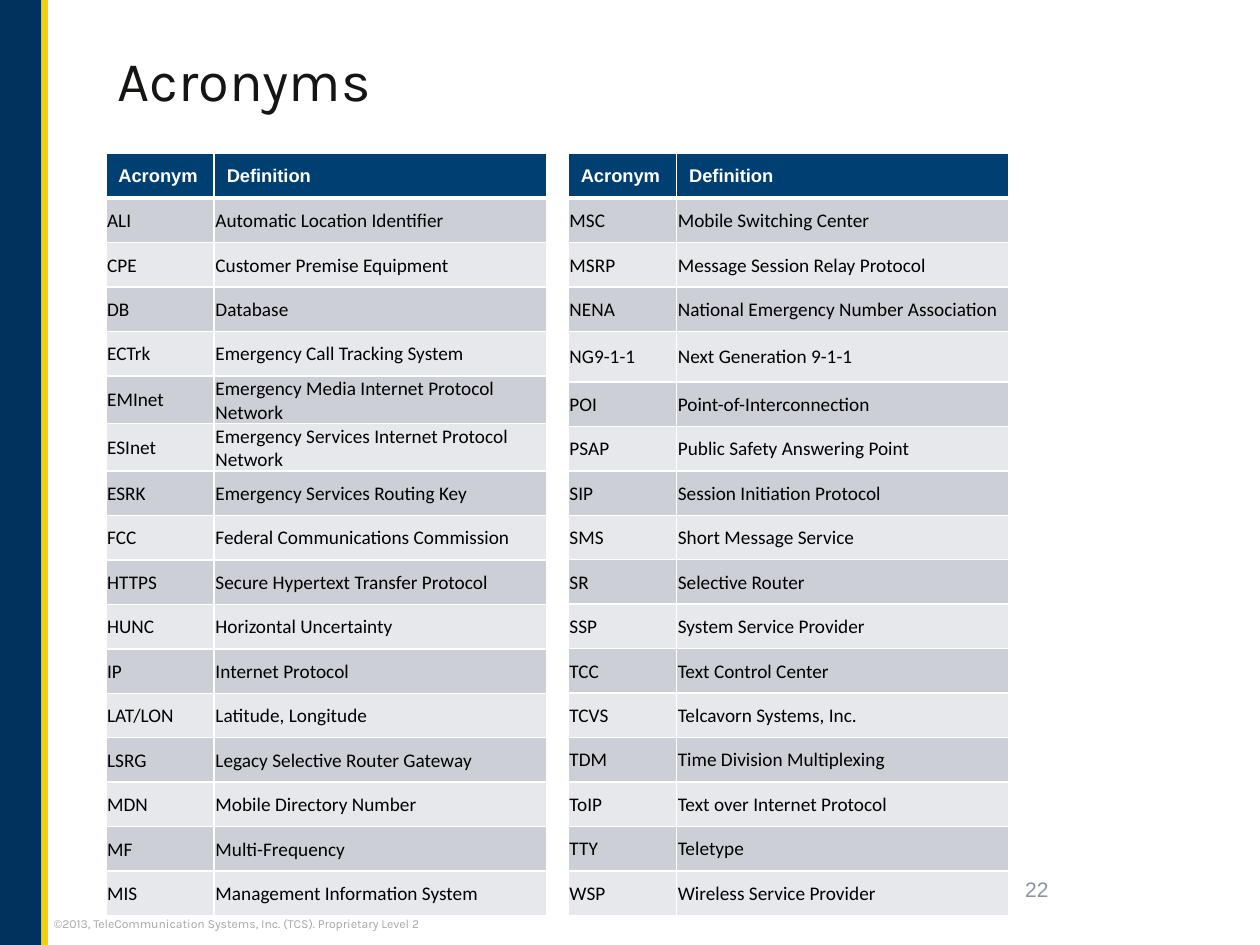
"""Build the Acronyms slide with two glossary tables."""
from dataclasses import dataclass

from lxml import etree
from pptx import Presentation
from pptx.dml.color import RGBColor
from pptx.enum.shapes import MSO_SHAPE
from pptx.enum.text import MSO_ANCHOR, PP_ALIGN
from pptx.oxml.ns import qn
from pptx.slide import Slide
from pptx.util import Inches, Pt

RECTANGLE = MSO_SHAPE.RECTANGLE
MIDDLE, TOP = MSO_ANCHOR.MIDDLE, MSO_ANCHOR.TOP
LEFT, RIGHT = PP_ALIGN.LEFT, PP_ALIGN.RIGHT
TITLE_ONLY = 5
ROW_HEIGHT = 6 / 17
COLUMN_WIDTHS = (0.86, 2.64)
TABLE_TOP = 1.22


@dataclass(frozen=True)
class TextStyle:
    """Font, size and colour of one kind of text."""
    font: str
    size: float
    color: str
    bold: bool = False


@dataclass(frozen=True)
class Theme:
    """Colours and text styles of the slide."""
    navy: str = "00325E"
    yellow: str = "F7CF09"
    header: str = "003F72"
    bands: tuple[str, str] = ("CCCFD5", "E7E8EB")
    border: str = "FFFFFF"
    title: TextStyle = TextStyle("Karla", 32, "151514")
    copyright: TextStyle = TextStyle("Karla", 7, "A6A6A6")
    number: TextStyle = TextStyle("Arial", 12, "8C93A5")
    heading: TextStyle = TextStyle("Arial", 10.5, "FFFFFF", True)
    entry: TextStyle = TextStyle("Calibri", 11, "000000")


@dataclass(frozen=True)
class Glossary:
    """One table of acronyms, with any rows of special height."""
    left: float
    entries: tuple[tuple[str, str], ...]
    tall_rows: tuple[tuple[int, float], ...] = ()


THEME = Theme()

FIRST_GLOSSARY = Glossary(0.84, (
    ("ALI", "Automatic Location Identifier"),
    ("CPE", "Customer Premise Equipment"),
    ("DB", "Database"),
    ("ECTrk", "Emergency Call Tracking System"),
    ("EMInet", "Emergency Media Internet Protocol Network"),
    ("ESInet", "Emergency Services Internet Protocol Network"),
    ("ESRK", "Emergency Services Routing Key"),
    ("FCC", "Federal Communications Commission"),
    ("HTTPS", "Secure Hypertext Transfer Protocol"),
    ("HUNC", "Horizontal Uncertainty"),
    ("IP", "Internet Protocol"),
    ("LAT/LON", "Latitude, Longitude"),
    ("LSRG", "Legacy Selective Router Gateway"),
    ("MDN", "Mobile Directory Number"),
    ("MF", "Multi-Frequency"),
    ("MIS", "Management Information System"),
))

SECOND_GLOSSARY = Glossary(4.51, (
    ("MSC", "Mobile Switching Center"),
    ("MSRP", "Message Session Relay Protocol"),
    ("NENA", "National Emergency Number Association"),
    ("NG9-1-1", "Next Generation 9-1-1"),
    ("POI", "Point-of-Interconnection"),
    ("PSAP", "Public Safety Answering Point"),
    ("SIP", "Session Initiation Protocol"),
    ("SMS", "Short Message Service"),
    ("SR", "Selective Router"),
    ("SSP", "System Service Provider"),
    ("TCC", "Text Control Center"),
    ("TCVS", "Telcavorn Systems, Inc."),
    ("TDM", "Time Division Multiplexing"),
    ("ToIP", "Text over Internet Protocol"),
    ("TTY", "Teletype"),
    ("WSP", "Wireless Service Provider"),
), ((4, 0.4),))


def write_text(frame, text: str, style: TextStyle, alignment=LEFT) -> None:
    """Put one styled paragraph in a text frame."""
    frame.text = text
    paragraph = frame.paragraphs[0]
    paragraph.alignment = alignment
    font = paragraph.font
    font.name, font.size, font.bold = style.font, Pt(style.size), style.bold
    font.color.rgb = RGBColor.from_string(style.color)


def add_bar(slide: Slide, left: float, width: float, color: str) -> None:
    """Draw a full-height bar."""
    bar = slide.shapes.add_shape(RECTANGLE, Inches(left), 0, Inches(width), Inches(7.5))
    bar.shadow.inherit = False
    bar.fill.solid()
    bar.fill.fore_color.rgb = RGBColor.from_string(color)
    bar.line.fill.background()


def add_label(slide: Slide, bounds: tuple[float, ...], text: str, style: TextStyle,
              alignment=LEFT, anchor=TOP) -> None:
    """Add a wrapping text box."""
    frame = slide.shapes.add_textbox(*map(Inches, bounds)).text_frame
    frame.word_wrap = True
    frame.vertical_anchor = anchor
    write_text(frame, text, style, alignment)


def format_cell(cell, text: str, style: TextStyle, color: str, bottom: float) -> None:
    """Write, border and fill one table cell."""
    write_text(cell.text_frame, text, style)
    cell.vertical_anchor = MIDDLE
    properties = cell._tc.get_or_add_tcPr()
    for side, width in (("L", 1), ("R", 1), ("T", 1), ("B", bottom)):
        line = etree.SubElement(properties, qn(f"a:ln{side}"), w=str(Pt(width)))
        fill = etree.SubElement(line, qn("a:solidFill"))
        etree.SubElement(fill, qn("a:srgbClr"), val=THEME.border)
    cell.fill.solid()
    cell.fill.fore_color.rgb = RGBColor.from_string(color)


def add_glossary(slide: Slide, glossary: Glossary) -> None:
    """Add a banded table of acronyms under its header row."""
    row_count = len(glossary.entries) + 1
    table = slide.shapes.add_table(
        row_count, len(COLUMN_WIDTHS), Inches(glossary.left), Inches(TABLE_TOP),
        Inches(sum(COLUMN_WIDTHS)), Inches(ROW_HEIGHT * row_count)).table
    for column, width in zip(table.columns, COLUMN_WIDTHS):
        column.width = Inches(width)
    heights = dict(glossary.tall_rows)
    for index, row in enumerate(table.rows):
        row.height = Inches(heights.get(index, ROW_HEIGHT))
    for cell, text in zip(table.rows[0].cells, ("Acronym", "Definition")):
        format_cell(cell, text, THEME.heading, THEME.header, 3)
    for index, entry in enumerate(glossary.entries):
        for cell, text in zip(table.rows[index + 1].cells, entry):
            cell.margin_left = cell.margin_right = cell.margin_top = Inches(0.01)
            cell.margin_bottom = 0
            if index == 0:
                format_cell(cell, text, THEME.entry, THEME.bands[0], 1)
                top_line = cell._tc.tcPr.find(qn("a:lnT"))
                top_line.set("w", str(Pt(3)))
            else:
                format_cell(cell, text, THEME.entry, THEME.bands[index % 2], 1)


def main() -> None:
    """Create and save the slide."""
    presentation = Presentation()
    presentation.slide_width, presentation.slide_height = Inches(10), Inches(7.5)
    slide = presentation.slides.add_slide(presentation.slide_layouts[TITLE_ONLY])
    add_bar(slide, 0, 0.33, THEME.navy)
    add_bar(slide, 0.33, 0.05, THEME.yellow)
    add_label(slide, (0.33, 7.22, 3.3, 0.22),
              "©2013, TeleCommunication Systems, Inc. (TCS). Proprietary Level 2",
              THEME.copyright)
    title = slide.shapes.title
    title.left, title.top = Inches(0.83), Inches(0.17)
    title.width, title.height = Inches(7.17), Inches(0.92)
    title.text_frame.vertical_anchor = MIDDLE
    write_text(title.text_frame, "Acronyms", THEME.title)
    add_glossary(slide, FIRST_GLOSSARY)
    add_label(slide, (7.21, 6.86, 1.21, 0.4), "22", THEME.number, RIGHT, MIDDLE)
    add_glossary(slide, SECOND_GLOSSARY)
    presentation.save("out.pptx")


if __name__ == "__main__":
    main()
